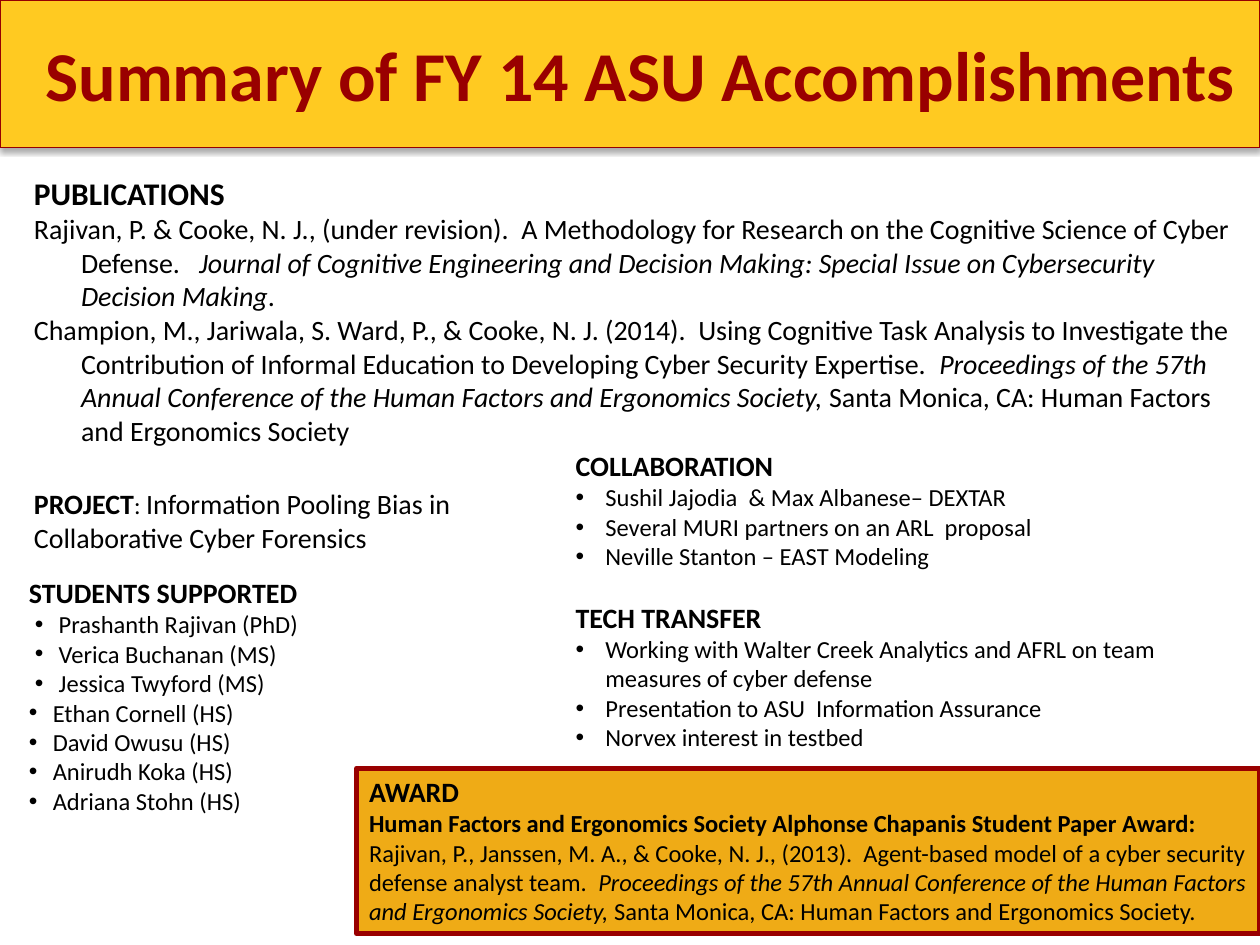
import lxml.etree
import pptx
import pptx.dml.color
import pptx.enum.shapes
import pptx.enum.text
import pptx.oxml.ns
import pptx.util

Cm, Pt = pptx.util.Cm, pptx.util.Pt
qn = pptx.oxml.ns.qn
ALIGN = pptx.enum.text.PP_ALIGN

COLORS = {
    "banner": "FFCA21", "banner_line": "960000", "maroon": "990000",
    "award": "EFAB16", "text": "000000", "shadow": "000000",
}
PLAIN = {"size": Pt(16), "bold": False, "italic": False}
ITALIC = {**PLAIN, "italic": True}
HEADING = {**PLAIN, "bold": True}
LARGE_HEADING = {**HEADING, "size": Pt(18)}
SMALL = {**PLAIN, "size": Pt(14)}
SMALL_ITALIC = {**ITALIC, "size": Pt(14)}
SMALL_BOLD = {**HEADING, "size": Pt(14)}
TITLE = {**HEADING, "size": Pt(40)}

HANGING = {"margin": Cm(0.95), "indent": Cm(-0.95)}
GRADUATE = {"margin": Cm(0.6), "indent": Cm(-0.48), "bullet": True}
HIGH_SCHOOL = {"margin": Cm(0.48), "indent": Cm(-0.48), "bullet": True}
ACTIVITY = {"margin": Cm(0.6), "indent": Cm(-0.6), "bullet": True}


def rgb(name):
    return pptx.dml.color.RGBColor.from_string(COLORS[name])


def place(box, left, top, width, height):
    box.left, box.top, box.width, box.height = map(Cm, (left, top, width, height))


def line(*spans, margin=0, indent=0, bullet=False, before=0):
    """Describe one paragraph made of (text, format) spans."""
    return {"spans": spans, "margin": margin, "indent": indent,
            "bullet": bullet, "before": before}


def bullets(texts, layout):
    return [line((text, SMALL), **layout) for text in texts]


def set_bullet(para, bullet):
    props = para._p.get_or_add_pPr()
    if bullet:
        lxml.etree.SubElement(props, qn("a:buFont"), typeface="Arial")
        lxml.etree.SubElement(props, qn("a:buChar"), char="•")
    else:
        lxml.etree.SubElement(props, qn("a:buNone"))
    return props


def write(box, lines, color="text", align=ALIGN.LEFT):
    frame = box.text_frame
    settings = {
        "word_wrap": True,
        "auto_size": pptx.enum.text.MSO_AUTO_SIZE.NONE,
        "vertical_anchor": pptx.enum.text.MSO_ANCHOR.TOP,
    }
    for name, value in settings.items():
        setattr(frame, name, value)
    for number, content in enumerate(lines):
        para = frame.add_paragraph() if number else frame.paragraphs[0]
        props = set_bullet(para, content["bullet"])
        props.set("marL", str(content["margin"]))
        props.set("indent", str(content["indent"]))
        para.alignment = align
        para.space_before = Pt(content["before"])
        for text, style in content["spans"]:
            span = para.add_run()
            span.text = text
            span.font.name = "Calibri"
            span.font.color.rgb = rgb(color)
            for name, value in style.items():
                setattr(span.font, name, value)


def add_panel(page, bounds, fill, outline, width):
    panel = page.shapes.add_shape(
        pptx.enum.shapes.MSO_SHAPE.RECTANGLE, *map(Cm, bounds))
    panel.shadow.inherit = False
    panel.fill.solid()
    panel.fill.fore_color.rgb = rgb(fill)
    panel.line.color.rgb = rgb(outline)
    panel.line.width = Pt(width)
    return panel


def add_shadow(panel):
    effects = panel._element.spPr.find(qn("a:effectLst"))
    shadow = lxml.etree.SubElement(
        effects, qn("a:outerShdw"), blurRad=str(Pt(3.1)), dist=str(Pt(1.8)),
        dir="5400000", rotWithShape="0")
    color = lxml.etree.SubElement(shadow, qn("a:srgbClr"), val=COLORS["shadow"])
    lxml.etree.SubElement(color, qn("a:alpha"), val="35000")


def add_title(page):
    title = page.shapes.title
    banner = add_panel(page, (0, 0, 25.4, 2.97), "banner", "banner_line", 0.75)
    add_shadow(banner)
    title._element.addprevious(banner._element)  # banner lies behind the title
    place(title, -0.74, 0.51, 27.3, 1.96)
    write(title, [line(("Summary of FY 14 ASU Accomplishments", TITLE))],
          "maroon", ALIGN.CENTER)


def add_publications(box):
    place(box, 0.43, 3.38, 24.97, 6.2)
    write(box, [
        line(("PUBLICATIONS", LARGE_HEADING), **HANGING),
        line(("Rajivan, P. & Cooke, N. J., (under revision).  A Methodology for "
              "Research on the Cognitive Science of Cyber Defense.   ", PLAIN),
             ("Journal of Cognitive Engineering and Decision Making: Special "
              "Issue on Cybersecurity Decision Making", ITALIC),
             (".", PLAIN), **HANGING),
        line(("Champion, M., Jariwala, S. Ward, P., & Cooke, N. J. (2014).  Using "
              "Cognitive Task Analysis to Investigate the Contribution of Informal "
              "Education to Developing Cyber Security Expertise.  ", PLAIN),
             ("Proceedings of the 57th Annual Conference of the Human Factors "
              "and Ergonomics Society, ", ITALIC),
             ("Santa Monica, CA: Human Factors and Ergonomics Society", PLAIN),
             **HANGING),
    ])


def add_project(box):
    place(box, 0.43, 9.68, 9.53, 1.63)
    write(box, [line(
        ("PROJECT", HEADING), (": ", SMALL),
        ("Information Pooling Bias in Collaborative Cyber Forensics", PLAIN))])


def add_students(box):
    place(box, 0.33, 11.48, 7.34, 7.09)
    graduates = ["Prashanth Rajivan (PhD)", "Verica Buchanan (MS)",
                 "Jessica Twyford (MS)"]
    pupils = ["Ethan Cornell (HS)", "David Owusu (HS)", "Anirudh Koka (HS)",
              "Adriana Stohn (HS)"]
    write(box, [line(("STUDENTS SUPPORTED", HEADING)),
                *bullets(graduates, GRADUATE), *bullets(pupils, HIGH_SCHOOL)])


def add_activities(box):
    place(box, 11.35, 8.92, 13.97, 6.4)
    partners = ["Sushil Jajodia  & Max Albanese– DEXTAR",
                "Several MURI partners on an ARL  proposal",
                "Neville Stanton – EAST Modeling"]
    transfers = ["Working with Walter Creek Analytics and AFRL on team "
                 "measures of cyber defense",
                 "Presentation to ASU  Information Assurance",
                 "Norvex interest in testbed"]
    write(box, [line(("COLLABORATION", HEADING)), *bullets(partners, ACTIVITY),
                line(("TECH TRANSFER", HEADING), before=17),
                *bullets(transfers, ACTIVITY)])


def add_award(page):
    panel = add_panel(page, (7.19, 15.49, 18.21, 3.33), "award", "maroon", 3)
    write(panel, [
        line(("AWARD", HEADING)),
        line(("Human Factors and Ergonomics Society Alphonse Chapanis Student "
              "Paper Award:", SMALL_BOLD)),
        line(("Rajivan, P., Janssen, M. A., & Cooke, N. J., (2013).  Agent-based "
              "model of a cyber security defense analyst team.  ", SMALL),
             ("Proceedings of the 57th Annual Conference of the Human Factors "
              "and Ergonomics Society, ", SMALL_ITALIC),
             ("Santa Monica, CA: Human Factors and Ergonomics Society.", SMALL)),
    ])


def main():
    deck = pptx.Presentation()
    deck.slide_width, deck.slide_height = Cm(25.4), Cm(19.05)
    page = deck.slides.add_slide(deck.slide_layouts.get_by_name("Comparison"))
    add_title(page)
    bodies = [box for box in page.placeholders if box.placeholder_format.idx]
    sections = (add_publications, add_students, add_project, add_activities)
    for add_section, box in zip(sections, bodies):
        add_section(box)
    add_award(page)
    deck.save("out.pptx")


if __name__ == "__main__":
    main()
